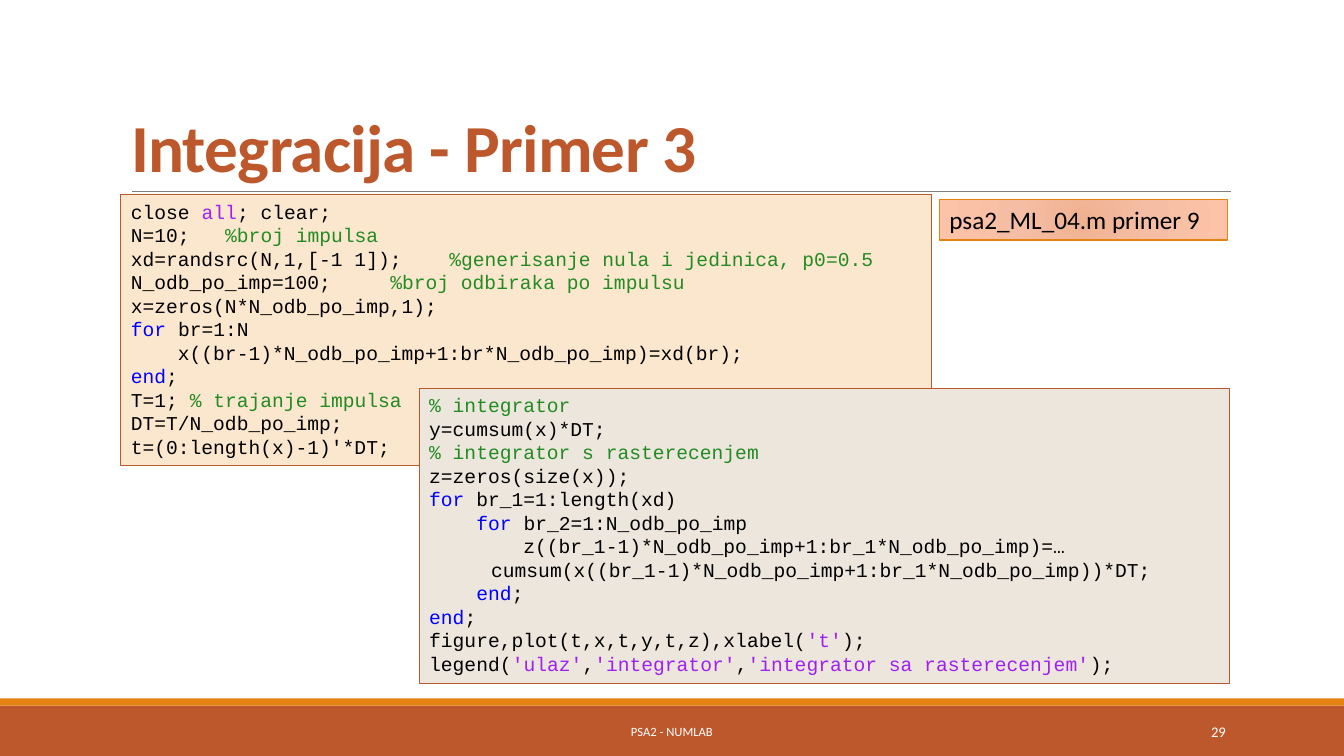
from dataclasses import dataclass
from functools import partial
from typing import NamedTuple

from pptx import Presentation
from pptx import util as u
from pptx.dml.color import RGBColor
from pptx.enum import shapes, text
from pptx.oxml import parse_xml
from pptx.oxml.ns import nsdecls, qn

COLORS = {
    "rust": "BD582C", "orange": "E48312", "gray": "808080",
    "cream": "FBE6CE", "stone": "ECE6DD", "white": "FFFFFF", "black": "000000",
    "keyword": "0000FF", "comment": "228B22", "string": "A020F0",
    "peach dark": "F0B191", "peach": "F5BEA4", "peach light": "FDC3A8",
}
CELL = u.Inches(0.1)  # one column or row of the layout grid
COLUMNS, ROWS = 133.33, 75
CONTINUATION_INDENT = 6.15


class Run(NamedTuple):
    text: str
    color: str = "black"


class Area(NamedTuple):
    column: float
    row: float
    columns: float
    rows: float

    def lengths(self) -> list[int]:
        return [round(value * CELL) for value in self]


@dataclass
class Line:
    runs: list[Run]
    indent: float = 0


@dataclass
class Panel:
    area: Area
    lines: list[Line]
    fill: str | None = None
    outline: str | None = None
    outline_width: float = 0.75
    font: str = "Calibri"
    size: float = 14
    align: text.PP_ALIGN = text.PP_ALIGN.LEFT
    anchor: text.MSO_ANCHOR = text.MSO_ANCHOR.TOP
    grows: bool = True


keyword = partial(Run, color="keyword")
comment = partial(Run, color="comment")
string = partial(Run, color="string")


def line(*parts: Run | str, indent: float = 0) -> Line:
    return Line([Run(part) if isinstance(part, str) else part for part in parts], indent)


def rgb(name: str) -> RGBColor:
    return RGBColor.from_string(COLORS[name])


def add_run(paragraph, content: Run, font: str, size: float):
    run = paragraph.add_run()
    run.text = content.text
    run.font.name, run.font.size = font, u.Pt(size)
    run.font.color.rgb = rgb(content.color)
    return run


def draw_panel(slide, panel: Panel):
    shape = slide.shapes.add_shape(shapes.MSO_SHAPE.RECTANGLE, *panel.area.lengths())
    shape.shadow.inherit = False
    if panel.fill:
        shape.fill.solid()
        shape.fill.fore_color.rgb = rgb(panel.fill)
    else:
        shape.fill.background()
    if panel.outline:
        shape.line.color.rgb = rgb(panel.outline)
        shape.line.width = u.Pt(panel.outline_width)
    else:
        shape.line.fill.background()

    frame = shape.text_frame
    frame.word_wrap = True
    frame.vertical_anchor = panel.anchor
    fit = text.MSO_AUTO_SIZE
    frame.auto_size = fit.SHAPE_TO_FIT_TEXT if panel.grows else fit.NONE
    for index, content in enumerate(panel.lines):
        paragraph = frame.add_paragraph() if index else frame.paragraphs[0]
        paragraph.alignment = panel.align
        if content.indent:
            properties = paragraph._p.get_or_add_pPr()
            properties.set("marL", str(round(content.indent * CELL)))
            properties.set("indent", "0")
        for run in content.runs:
            add_run(paragraph, run, panel.font, panel.size)
    return shape


def set_radial_fill(shape, stops: dict[int, str]) -> None:
    marks = "".join(
        f'<a:gs pos="{share * 1000}"><a:srgbClr val="{COLORS[name]}"/></a:gs>'
        for share, name in stops.items()
    )
    gradient = parse_xml(
        f'<a:gradFill {nsdecls("a")} rotWithShape="1"><a:gsLst>{marks}</a:gsLst>'
        '<a:path path="circle"><a:fillToRect l="100000" t="100000" r="100000" b="100000"/>'
        "</a:path></a:gradFill>"
    )
    properties = shape._element.spPr
    properties.replace(properties.find(qn("a:solidFill")), gradient)


def draw_title(slide, area: Area, content: Run) -> None:
    title = slide.shapes.title
    title.left, title.top, title.width, title.height = area.lengths()
    frame = title.text_frame
    frame.word_wrap = True
    frame.auto_size = text.MSO_AUTO_SIZE.NONE
    frame.vertical_anchor = text.MSO_ANCHOR.BOTTOM
    paragraph = frame.paragraphs[0]
    paragraph.alignment = text.PP_ALIGN.LEFT
    paragraph.line_spacing = 0.85
    run = add_run(paragraph, content, "Calibri", 48)
    run.font.bold = True
    run._r.get_or_add_rPr().set("spc", "-50")


def draw_rule(slide, start: float, end: float, row: float) -> None:
    left, right, top = (round(value * CELL) for value in (start, end, row))
    rule = slide.shapes.add_connector(shapes.MSO_CONNECTOR.STRAIGHT, left, top, right, top)
    rule.line.color.rgb = rgb("gray")
    rule.line.width = u.Pt(0.5)
    rule._element.spPr.append(parse_xml(f'<a:effectLst {nsdecls("a")}/>'))


SETUP_CODE = [
    line("close ", string("all"), "; clear;"),
    line("N=10;   ", comment("%broj impulsa")),
    line("xd=randsrc(N,1,[-1 1]);    ", comment("%generisanje nula i jedinica, p0=0.5")),
    line("N_odb_po_imp=100;     ", comment("%broj odbiraka po impulsu")),
    line("x=zeros(N*N_odb_po_imp,1);"),
    line(keyword("for "), "br=1:N"),
    line("    x((br-1)*N_odb_po_imp+1:br*N_odb_po_imp)=xd(br);"),
    line(keyword("end"), ";"),
    line("T=1; ", comment("% trajanje impulsa")),
    line("DT=T/N_odb_po_imp;"),
    line("t=(0:length(x)-1)'*DT;"),
]
INTEGRATOR_CODE = [
    line(comment("% integrator")),
    line("y=cumsum(x)*DT;"),
    line(comment("% integrator s rasterecenjem")),
    line("z=zeros(size(x));"),
    line(keyword("for"), " br_1=1:length(xd)"),
    line("    ", keyword("for"), " br_2=1:N_odb_po_imp"),
    line("        z((br_1-1)*N_odb_po_imp+1:br_1*N_odb_po_imp)=…"),
    line("cumsum(x((br_1-1)*N_odb_po_imp+1:br_1*N_odb_po_imp))*DT;", indent=CONTINUATION_INDENT),
    line("    ", keyword("end"), ";"),
    line(keyword("end"), ";"),
    line("figure,plot(t,x,t,y,t,z),xlabel(", string("'t'"), ");"),
    line("legend(", string("'ulaz'"), ",", string("'integrator'"), ",",
         string("'integrator sa rasterecenjem'"), ");"),
]

Code = partial(Panel, outline="rust", font="Courier New")
FooterText = partial(Panel, anchor=text.MSO_ANCHOR.MIDDLE, grows=False)
BANDS = [
    Panel(Area(0, 70, COLUMNS, 5), [], fill="rust", grows=False),
    Panel(Area(0, 69.3, COLUMNS, 0.7), [], fill="orange", grows=False),
]
CODE_PANELS = [
    Code(Area(12, 19.3, 80.4, 26.9), SETUP_CODE, fill="cream"),
    Code(Area(41.6, 38.5, 80.4, 29.3), INTEGRATOR_CODE, fill="stone"),
]
FILE_LABEL = Panel(Area(93.2, 19.8, 28.6, 4), [line("psa2_ML_04.m primer 9")],
                   fill="peach", outline="orange", outline_width=1, size=18)
FOOTER = [
    FooterText(Area(40.3, 70.6, 52.7, 4), [line(Run("PSA2 - NUMLAB", "white"))],
               size=9, align=text.PP_ALIGN.CENTER),
    FooterText(Area(108.3, 70.6, 14.3, 4), [line(Run("29", "white"))],
               size=10.5, align=text.PP_ALIGN.RIGHT),
]


def main() -> None:
    presentation = Presentation()
    presentation.slide_width = round(COLUMNS * CELL)
    presentation.slide_height = ROWS * CELL
    slide = presentation.slides.add_slide(presentation.slide_layouts[5])

    # Title and rule
    draw_title(slide, Area(12, 3.1, 110, 15.9), Run("Integracija - Primer 3", "rust"))
    draw_rule(slide, 13.1, 122.1, 19)

    # Bottom bands, code listings and footer
    for panel in BANDS + CODE_PANELS + FOOTER:
        draw_panel(slide, panel)

    # File name label
    label = draw_panel(slide, FILE_LABEL)
    set_radial_fill(label, {0: "peach dark", 45: "peach", 100: "peach light"})

    presentation.save("out.pptx")


if __name__ == "__main__":
    main()
